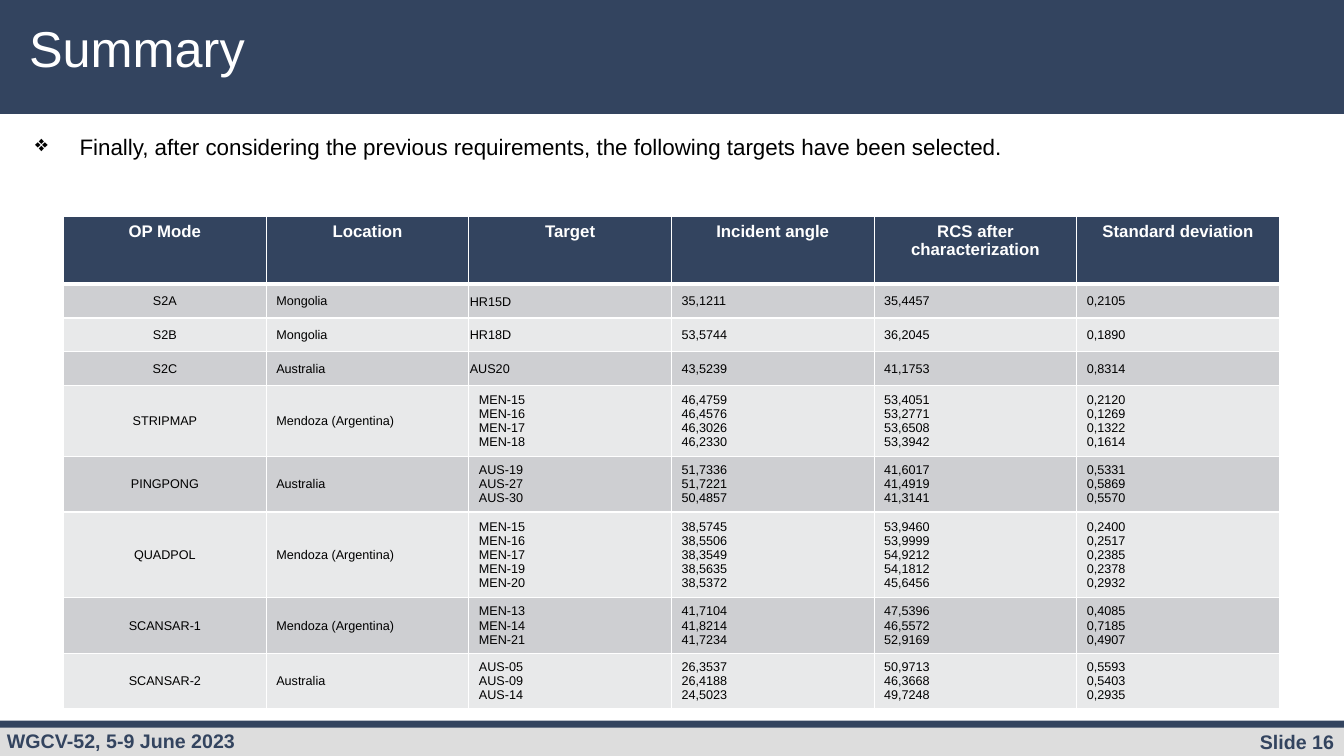
import pptx
import pptx.dml.color
import pptx.enum.shapes
import pptx.enum.text
import pptx.util
from lxml import etree
from pptx.oxml.ns import qn

RGBColor = pptx.dml.color.RGBColor
ALIGN = pptx.enum.text.PP_ALIGN
ANCHOR = pptx.enum.text.MSO_ANCHOR

NAVY = RGBColor(0x33, 0x44, 0x5F)
FOOTER_GREY = RGBColor(0xDD, 0xDD, 0xDD)
DARK_BAND = RGBColor(0xCE, 0xCF, 0xD2)
LIGHT_BAND = RGBColor(0xE8, 0xE9, 0xEA)
WHITE = RGBColor(0xFF, 0xFF, 0xFF)
BLACK = RGBColor(0x00, 0x00, 0x00)

# The slide is a grid of 100 columns by 100 rows
WIDTH, HEIGHT = pptx.util.Inches(13.33), pptx.util.Inches(7.5)
COLUMN, ROW = WIDTH / 100, HEIGHT / 100

HEADINGS = ["OP Mode", "Location", "Target", "Incident angle",
            "RCS after characterization", "Standard deviation"]

# Mode, location, then one (target, angle, RCS, deviation) per line
MODES = [
    ("S2A", "Mongolia", [("HR15D", "35,1211", "35,4457", "0,2105")]),
    ("S2B", "Mongolia", [("HR18D", "53,5744", "36,2045", "0,1890")]),
    ("S2C", "Australia", [("AUS20", "43,5239", "41,1753", "0,8314")]),
    ("STRIPMAP", "Mendoza (Argentina)", [
        ("MEN-15", "46,4759", "53,4051", "0,2120"),
        ("MEN-16", "46,4576", "53,2771", "0,1269"),
        ("MEN-17", "46,3026", "53,6508", "0,1322"),
        ("MEN-18", "46,2330", "53,3942", "0,1614")]),
    ("PINGPONG", "Australia", [
        ("AUS-19", "51,7336", "41,6017", "0,5331"),
        ("AUS-27", "51,7221", "41,4919", "0,5869"),
        ("AUS-30", "50,4857", "41,3141", "0,5570")]),
    ("QUADPOL", "Mendoza (Argentina)", [
        ("MEN-15", "38,5745", "53,9460", "0,2400"),
        ("MEN-16", "38,5506", "53,9999", "0,2517"),
        ("MEN-17", "38,3549", "54,9212", "0,2385"),
        ("MEN-19", "38,5635", "54,1812", "0,2378"),
        ("MEN-20", "38,5372", "45,6456", "0,2932")]),
    ("SCANSAR-1", "Mendoza (Argentina)", [
        ("MEN-13", "41,7104", "47,5396", "0,4085"),
        ("MEN-14", "41,8214", "46,5572", "0,7185"),
        ("MEN-21", "41,7234", "52,9169", "0,4907")]),
    ("SCANSAR-2", "Australia", [
        ("AUS-05", "26,3537", "50,9713", "0,5593"),
        ("AUS-09", "26,4188", "46,3668", "0,5403"),
        ("AUS-14", "24,5023", "49,7248", "0,2935")]),
]


def place(left, top, width, height):
    return (round(left * COLUMN), round(top * ROW),
            round(width * COLUMN), round(height * ROW))


def set_font(paragraph, size, color, bold=False):
    font = paragraph.font
    font.name, font.size, font.bold = "Arial", pptx.util.Pt(size), bold
    font.color.rgb = color


def add_band(slide, area, color):
    band = slide.shapes.add_shape(
        pptx.enum.shapes.MSO_SHAPE.RECTANGLE, *place(*area))
    band.shadow.inherit = False
    band.fill.solid()
    band.fill.fore_color.rgb = color
    band.line.fill.background()


def add_text(slide, area, text, size, color, bold=False,
             align=ALIGN.LEFT, spacing=1.0, bullet=None):
    frame = slide.shapes.add_textbox(*place(*area)).text_frame
    frame.word_wrap = True
    paragraph = frame.paragraphs[0]
    paragraph.text = text
    paragraph.alignment = align
    paragraph.line_spacing = spacing
    if bullet:
        properties = paragraph._p.get_or_add_pPr()
        properties.set("marL", str(pptx.util.Inches(0.5)))
        properties.set("indent", str(pptx.util.Inches(-0.44)))
        etree.SubElement(properties, qn("a:buChar"), char=bullet)
    set_font(paragraph, size, color, bold)


def add_borders(cell, top, bottom):
    properties = cell._tc.get_or_add_tcPr()
    for side, points in (("L", 1), ("R", 1), ("T", top), ("B", bottom)):
        border = etree.SubElement(properties, qn(f"a:ln{side}"),
                                  w=str(pptx.util.Pt(points)))
        paint = etree.SubElement(border, qn("a:solidFill"))
        etree.SubElement(paint, qn("a:srgbClr"), val=str(WHITE))


def fill_cell(cell, text, fill, size, color, bold=False,
              align=ALIGN.LEFT, anchor=ANCHOR.MIDDLE, top=1, bottom=1):
    cell.text = text
    cell.vertical_anchor = anchor
    add_borders(cell, top, bottom)
    cell.fill.solid()
    cell.fill.fore_color.rgb = fill
    for paragraph in cell.text_frame.paragraphs:
        paragraph.alignment = align
        set_font(paragraph, size, color, bold)


def add_targets_table(slide, left, top, width):
    heights = [8.93] + [max(4.47, 1.33 + 1.9 * len(lines))
                        for _, _, lines in MODES]
    area = place(left, top, width, sum(heights))
    table = slide.shapes.add_table(len(heights), len(HEADINGS), *area).table
    for row, height in zip(table.rows, heights):
        row.height = round(height * ROW)

    # Heading row
    for cell, heading in zip(table.rows[0].cells, HEADINGS):
        fill_cell(cell, heading, NAVY, 12, WHITE, bold=True,
                  align=ALIGN.CENTER, anchor=ANCHOR.TOP, bottom=3)

    # One banded row per mode
    for number, (mode, location, lines) in enumerate(MODES, start=1):
        texts = [mode, location] + ["\n".join(values) for values in zip(*lines)]
        band = DARK_BAND if number % 2 else LIGHT_BAND
        for index, text in enumerate(texts):
            fill_cell(table.cell(number, index), text, band, 9, BLACK,
                      align=ALIGN.LEFT if index else ALIGN.CENTER,
                      top=3 if number == 1 else 1)
        if len(lines) == 1:
            target = table.cell(number, HEADINGS.index("Target"))
            target.margin_left = target.margin_right = pptx.util.Inches(0.01)
            target.margin_top = pptx.util.Inches(0.01)
            target.margin_bottom = 0


def main():
    deck = pptx.Presentation()
    deck.slide_width, deck.slide_height = WIDTH, HEIGHT
    slide = deck.slides.add_slide(deck.slide_layouts[6])

    # Header and footer bands
    add_band(slide, (0, 0, 100, 15.07), NAVY)
    add_band(slide, (0, 95.87, 100, 4.13), FOOTER_GREY)
    add_band(slide, (0, 95.33, 100, 0.93), NAVY)

    # Footer text
    add_text(slide, (84.25, 95.87, 15.75, 4.13), "Slide 16", 14, NAVY,
             bold=True, align=ALIGN.RIGHT)
    add_text(slide, (-0.23, 95.73, 40.43, 4.27), "WGCV-52, 5-9 June 2023",
             14, NAVY, bold=True)

    # Statement and title
    add_text(slide, (1.43, 17.33, 94.3, 8), "Finally, after considering the "
             "previous requirements, the following targets have been selected.",
             16, BLACK, spacing=0.9, bullet="❖")
    add_text(slide, (1.43, 2.53, 77.04, 11.33), "Summary", 36, WHITE,
             spacing=0.9)

    # Selected targets
    add_targets_table(slide, 4.73, 28.67, 90.47)

    deck.save("out.pptx")


if __name__ == "__main__":
    main()
